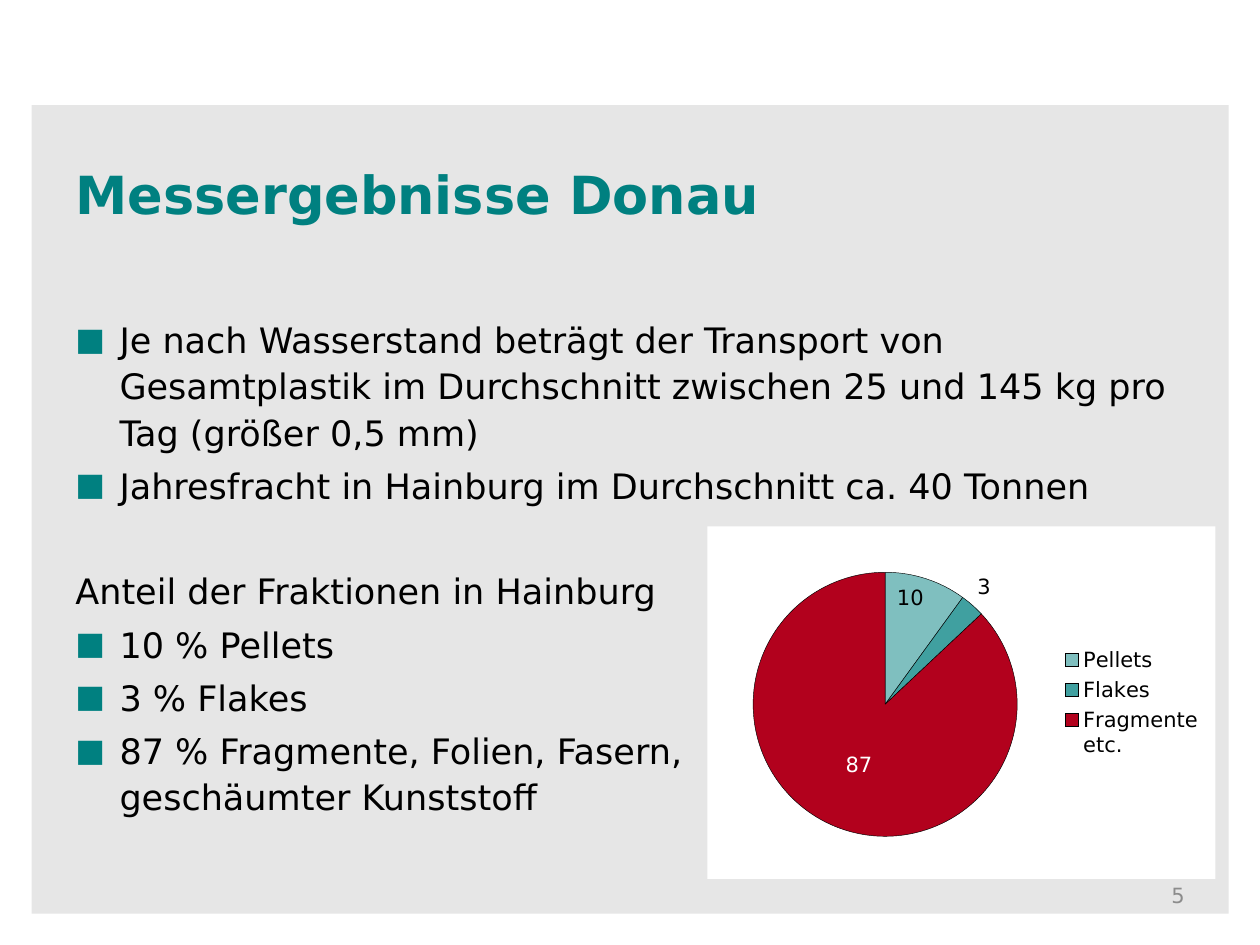
"""Build the slide with the Danube plastic measurements and a pie chart of the fractions."""
from dataclasses import dataclass

from lxml.etree import SubElement
from pptx import Presentation
from pptx.chart.data import CategoryChartData
from pptx.dml.color import RGBColor
from pptx.enum.chart import XL_CHART_TYPE, XL_LABEL_POSITION, XL_LEGEND_POSITION
from pptx.enum.shapes import MSO_SHAPE
from pptx.enum.text import MSO_ANCHOR, PP_ALIGN
from pptx.oxml import parse_xml
from pptx.oxml.ns import nsdecls, qn
from pptx.util import Cm, Pt


@dataclass(frozen=True)
class Theme:
    font: str = "DejaVu Sans"
    accent: str = "008080"
    panel: str = "E6E6E6"
    text: str = "000000"
    muted: str = "8C8C8C"
    white: str = "FFFFFF"
    slices: tuple = ("7FBFBF", "40A0A0", "B2011D")
    title_size: int = 30
    body_size: int = 20
    small_size: int = 12


theme = Theme()


def style_font(font, size, color, bold=False):
    font.name = theme.font
    font.size = Pt(size)
    font.bold = bold
    font.color.rgb = RGBColor.from_string(color)


def add_text_frame(slide, left, top, width, height, anchor):
    frame = slide.shapes.add_textbox(Cm(left), Cm(top), Cm(width), Cm(height)).text_frame
    frame.word_wrap = True
    frame.vertical_anchor = anchor
    return frame


presentation = Presentation()
presentation.slide_width = Cm(25.4)
presentation.slide_height = Cm(19.05)
slide = presentation.slides.add_slide(presentation.slide_layouts[6])

panel = slide.shapes.add_shape(MSO_SHAPE.RECTANGLE, Cm(0.64), Cm(2.12), Cm(24.13), Cm(16.3))
panel.shadow.inherit = False
panel.fill.solid()
panel.fill.fore_color.rgb = RGBColor.from_string(theme.panel)
panel.line.fill.background()

title = add_text_frame(slide, 1.27, 2.9, 22.86, 3.17, MSO_ANCHOR.TOP)
title.margin_top = Cm(0.36)
run = title.paragraphs[0].add_run()
run.text = "Messergebnisse Donau"
style_font(run.font, theme.title_size, theme.accent, bold=True)

number = add_text_frame(slide, 18.21, 17.7, 5.92, 0.71, MSO_ANCHOR.MIDDLE)
number.paragraphs[0].alignment = PP_ALIGN.RIGHT
run = number.paragraphs[0].add_run()
run.text = "5"
style_font(run.font, theme.small_size, theme.muted)

body_lines = [
    (True, 0, ["Je nach Wasserstand beträgt der Transport von Gesamtplastik im "
               "Durchschnitt zwischen 25 und 145 kg pro Tag (größer 0,5 mm)"]),
    (True, 4, ["Jahresfracht in Hainburg im Durchschnitt ca. 40 Tonnen"]),
    (False, 34, ["Anteil der Fraktionen in Hainburg"]),
    (True, 4, ["10 % Pellets"]),
    (True, 4, ["3 % Flakes"]),
    (True, 4, ["87 % Fragmente, Folien, Fasern, ", "geschäumter Kunststoff"]),
]
body = add_text_frame(slide, 1.27, 6.07, 22.86, 11.99, MSO_ANCHOR.TOP)
body.margin_top = Cm(0.27)
for index, (bulleted, space_before, parts) in enumerate(body_lines):
    paragraph = body.add_paragraph() if index else body.paragraphs[0]
    paragraph.line_spacing = 1.1
    paragraph.space_before = Pt(space_before)
    if bulleted:
        properties = paragraph._p.get_or_add_pPr()
        properties.set("marL", str(Cm(0.89)))
        properties.set("indent", str(-Cm(0.89)))
        bullet_color = SubElement(properties, qn("a:buClr"))
        SubElement(bullet_color, qn("a:srgbClr"), val=theme.accent)
        SubElement(properties, qn("a:buSzPct"), val="90000")
        SubElement(properties, qn("a:buFont"), typeface=theme.font)
        SubElement(properties, qn("a:buChar"), char="■")
    for part_index, part in enumerate(parts):
        if part_index:
            paragraph.add_line_break()
        run = paragraph.add_run()
        run.text = part
        style_font(run.font, theme.body_size, theme.text)

data = CategoryChartData()
data.categories = ["Pellets", "Flakes", "Fragmente etc."]
data.add_series("Series 1", (10, 3, 87))
chart = slide.shapes.add_chart(
    XL_CHART_TYPE.PIE, Cm(14.26), Cm(10.61), Cm(10.24), Cm(7.11), data
).chart
chart.has_title = False
style_font(chart.font, theme.small_size, theme.text)
chart.has_legend = True
chart.legend.position = XL_LEGEND_POSITION.RIGHT
chart.legend.include_in_layout = False
style_font(chart.legend.font, theme.small_size, theme.text)

plot = chart.plots[0]
plot.vary_by_categories = True
plot.has_data_labels = True
plot.data_labels.show_value = True
style_font(plot.data_labels.font, theme.small_size, theme.text)
label_styles = [
    (XL_LABEL_POSITION.INSIDE_END, theme.text),
    (XL_LABEL_POSITION.OUTSIDE_END, theme.text),
    (XL_LABEL_POSITION.CENTER, theme.white),
]
for index, (color, (position, label_color)) in enumerate(zip(theme.slices, label_styles)):
    point = plot.series[0].points[index]
    point.format.fill.solid()
    point.format.fill.fore_color.rgb = RGBColor.from_string(color)
    point.format.line.color.rgb = RGBColor.from_string(theme.text)
    point.format.line.width = Pt(0.25)
    style_font(point.data_label.font, theme.small_size, label_color)
    point.data_label.position = position

chart_area = chart.element.find(qn("c:chart"))
chart_area.addnext(parse_xml(
    f'<c:spPr {nsdecls("c", "a")}><a:solidFill><a:srgbClr val="{theme.white}"/></a:solidFill>'
    "<a:ln><a:noFill/></a:ln></c:spPr>"
))
plot_area = chart_area.find(qn("c:plotArea"))
for layout in plot_area.findall(qn("c:layout")):
    plot_area.remove(layout)
plot_area.insert(0, parse_xml(
    f'<c:layout {nsdecls("c")}><c:manualLayout><c:layoutTarget val="inner"/>'
    '<c:xMode val="edge"/><c:yMode val="edge"/>'
    '<c:x val="0.09"/><c:y val="0.13"/><c:w val="0.52"/><c:h val="0.75"/>'
    "</c:manualLayout></c:layout>"
))

presentation.save("out.pptx")
